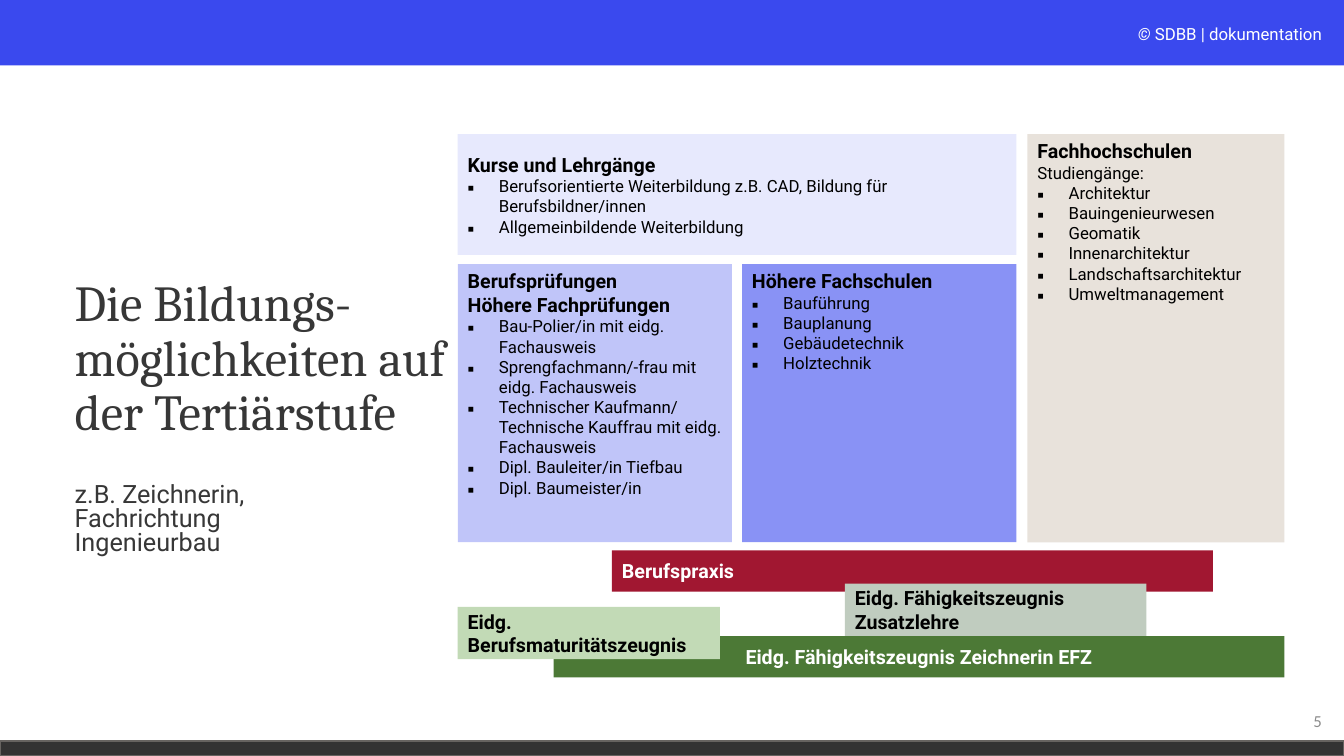
from lxml.etree import SubElement
from pptx import Presentation
from pptx.dml.color import RGBColor
from pptx.enum.shapes import MSO_SHAPE as Shape
from pptx.enum.text import MSO_ANCHOR as Anchor, MSO_AUTO_SIZE as AutoSize, PP_ALIGN as Align
from pptx.oxml.ns import qn
from pptx.util import Inches, Pt

BLACK, WHITE, DARK = "000000", "FFFFFF", "373737"
SLIDE_W, SLIDE_H = 13.33, 7.5
LEFT, RIGHT, TOP, BOTTOM = 4.54, 12.74, 1.33, 5.38
GAP, COLUMN_W, COURSES_H = 0.1, 2.72, 1.2


def color(hex_string):
    return RGBColor.from_string(hex_string)


def set_font(paragraph, size, hex_color, name="Roboto", bold=False):
    font = paragraph.font
    font.name, font.size, font.bold = name, Pt(size), bold
    font.color.rgb = color(hex_color)


def set_bullet(paragraph, char=None, indent=0.0):
    props = paragraph._p.get_or_add_pPr()
    props.set("marL", str(Inches(indent)))
    props.set("indent", str(-Inches(indent)))
    if char:
        SubElement(props, qn("a:buFont"), typeface="Noto Sans Symbols")
        SubElement(props, qn("a:buChar"), char=char)
    else:
        SubElement(props, qn("a:buNone"))


def add_rect(slide, box, fill, line=None):
    rect = slide.shapes.add_shape(Shape.RECTANGLE, *map(Inches, box))
    rect.shadow.inherit = False
    rect.fill.solid()
    rect.fill.fore_color.rgb = color(fill)
    if line:
        rect.line.color.rgb = color(line)
        rect.line.width = Pt(1)
    else:
        rect.line.fill.background()
    return rect


def add_panel(slide, box, fill, headings, intro=(), bullets=(),
              ink=BLACK, anchor=Anchor.MIDDLE, align=Align.LEFT):
    """Coloured box with bold headings, plain lines and a bulleted list."""
    frame = add_rect(slide, box, fill).text_frame
    frame.word_wrap = True
    frame.vertical_anchor = anchor
    rows = [(text, "heading") for text in headings]
    rows += [(text, "intro") for text in intro]
    rows += [(text, "bullet") for text in bullets]
    for i, (text, role) in enumerate(rows):
        paragraph = frame.add_paragraph() if i else frame.paragraphs[0]
        paragraph.text = text
        paragraph.alignment = align
        if role == "bullet":
            set_bullet(paragraph, "▪", 0.31)
        is_heading = role == "heading"
        set_font(paragraph, 14 if is_heading else 12, ink, bold=is_heading)


def add_label(slide, box, text, hex_color, name="Roboto"):
    """Right-aligned small text; returns its paragraph."""
    frame = slide.shapes.add_textbox(*map(Inches, box)).text_frame
    frame.word_wrap = True
    frame.vertical_anchor = Anchor.MIDDLE
    label = frame.paragraphs[0]
    label.alignment = Align.RIGHT
    label.text = text
    set_font(label, 12, hex_color, name)
    return label


def add_frame(slide):
    """Header band with copyright, footer band and page number."""
    add_rect(slide, (0, 0, SLIDE_W, 0.65), "3A49EE")
    add_rect(slide, (0, 7.35, SLIDE_W, 0.15), "333333", line="666360")
    copyright_line = add_label(slide, (8.62, 0.19, 4.59, 0.3), "© ", WHITE)
    copyright_line.runs[0].font.italic = True
    copyright_line.add_run().text = "SDBB | dokumentation"
    add_label(slide, (10.21, 6.95, 3, 0.4), "5", "8C8C8C", "Calibri")


def fill_placeholder(holder, box, text, size, name, spacing, anchor):
    holder.left, holder.top, holder.width, holder.height = map(Inches, box)
    frame = holder.text_frame
    frame.word_wrap = True
    frame.auto_size = AutoSize.NONE
    frame.vertical_anchor = anchor
    frame.text = text
    paragraph = frame.paragraphs[0]
    paragraph.alignment = Align.LEFT
    paragraph.line_spacing = spacing
    paragraph.space_before = Pt(0)
    set_bullet(paragraph)
    set_font(paragraph, size, DARK, name)


def add_heading(slide, left, top):
    """Title with the example profession below it."""
    title_h = 2.36
    fill_placeholder(slide.shapes.title, (left, top, 4, title_h),
                     "Die Bildungs-möglichkeiten auf der Tertiärstufe",
                     36, "Cambria", 0.9, Anchor.MIDDLE)
    fill_placeholder(slide.placeholders[1], (left, top + title_h, 3.15, 0.88),
                     "z.B. Zeichnerin, Fachrichtung Ingenieurbau",
                     18, "Roboto", 0.8, Anchor.TOP)


def add_education_paths(slide, left, top, right, bottom):
    """Courses above two columns, universities at full height on the right."""
    second_left = left + COLUMN_W + GAP
    third_left = second_left + COLUMN_W + GAP + 0.01
    columns_top = top + COURSES_H + GAP - 0.01
    columns_h = bottom - columns_top

    add_panel(slide, (left, top, 2 * COLUMN_W + GAP, COURSES_H), "E7E9FD",
              ["Kurse und Lehrgänge"],
              bullets=["Berufsorientierte Weiterbildung z.B. CAD, Bildung für Berufsbildner/innen",
                       "Allgemeinbildende Weiterbildung"])
    add_panel(slide, (third_left, top, right - third_left, bottom - top), "E8E2DB",
              ["Fachhochschulen"], ["Studiengänge:"],
              ["Architektur", "Bauingenieurwesen", "Geomatik", "Innenarchitektur",
               "Landschaftsarchitektur", "Umweltmanagement"], anchor=Anchor.TOP)
    add_panel(slide, (left, columns_top, COLUMN_W, columns_h), "C0C5F9",
              ["Berufsprüfungen", "Höhere Fachprüfungen"],
              bullets=["Bau-Polier/in mit eidg. Fachausweis",
                       "Sprengfachmann/-frau mit eidg. Fachausweis",
                       "Technischer Kaufmann/ Technische Kauffrau mit eidg. Fachausweis",
                       "Dipl. Bauleiter/in Tiefbau", "Dipl. Baumeister/in"],
              anchor=Anchor.TOP)
    add_panel(slide, (second_left, columns_top, COLUMN_W, columns_h), "8992F5",
              ["Höhere Fachschulen"],
              bullets=["Bauführung", "Bauplanung", "Gebäudetechnik", "Holztechnik"],
              anchor=Anchor.TOP)


def add_foundations(slide, left, top, right):
    """Practice and certificates that the education paths build on."""
    bar_h, certificate_h = 0.41, 0.52
    efz_left, efz_top = left + 0.95, top + 0.85
    add_panel(slide, (left + 1.53, top, 5.96, bar_h), "A11731",
              ["Berufspraxis"], ink=WHITE)
    add_panel(slide, (left + 3.84, efz_top - certificate_h, 2.99, certificate_h), "C0CCBF",
              ["Eidg. Fähigkeitszeugnis", "Zusatzlehre"])
    add_panel(slide, (efz_left, efz_top, right - efz_left, bar_h), "4C7936",
              ["Eidg. Fähigkeitszeugnis Zeichnerin EFZ"], ink=WHITE, align=Align.CENTER)
    add_panel(slide, (left, top + 0.56, 2.6, certificate_h), "C2DAB6",
              ["Eidg. Berufsmaturitätszeugnis"])


def main():
    deck = Presentation()
    deck.slide_width, deck.slide_height = Inches(SLIDE_W), Inches(SLIDE_H)
    slide = deck.slides.add_slide(deck.slide_layouts[1])
    add_frame(slide)
    add_heading(slide, 0.64, 2.39)
    add_education_paths(slide, LEFT, TOP, RIGHT, BOTTOM)
    add_foundations(slide, LEFT, BOTTOM + 0.08, RIGHT)
    deck.save("out.pptx")


if __name__ == "__main__":
    main()
